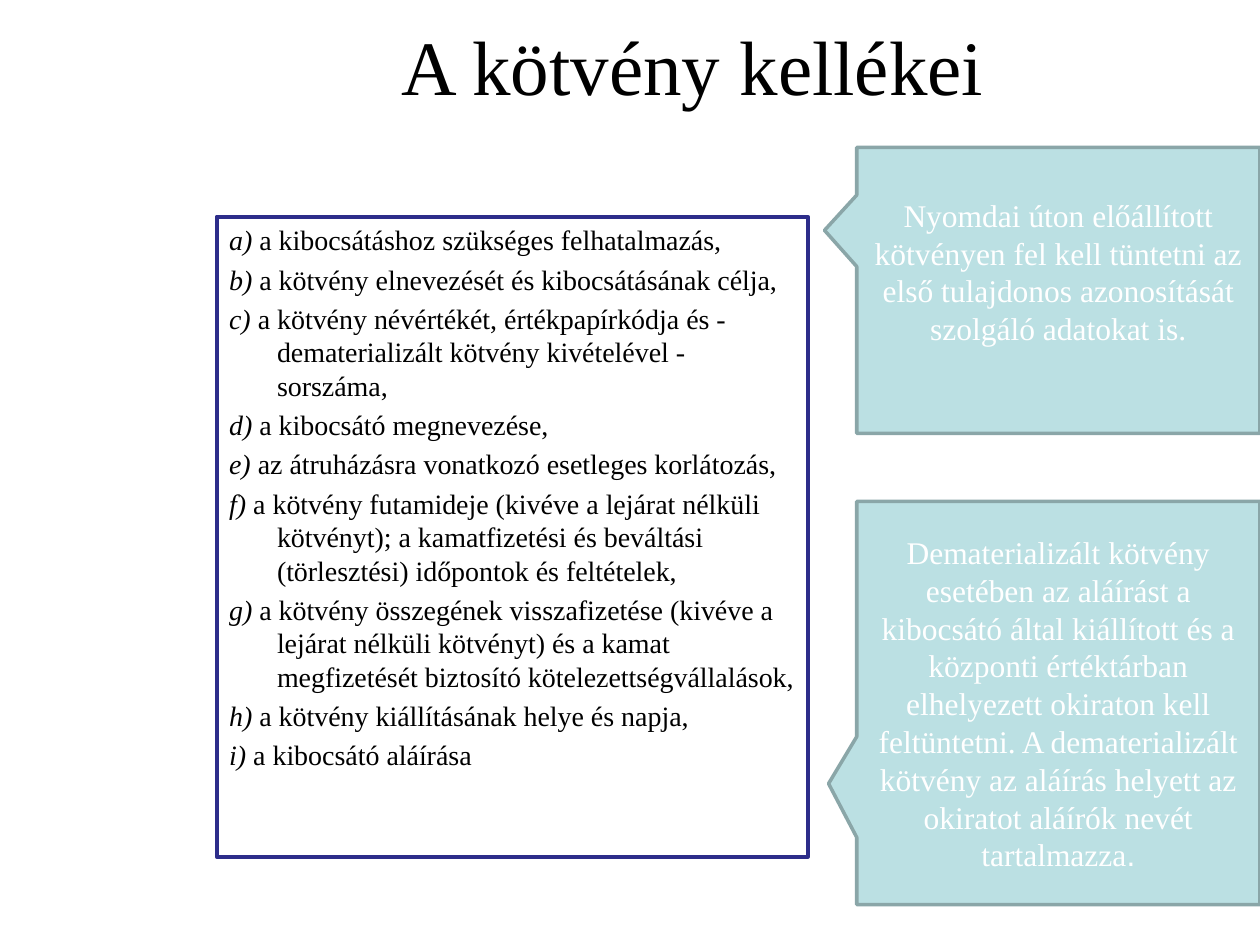
from pptx import Presentation, util as u
from pptx.dml.color import RGBColor
from pptx.enum import shapes, text
from pptx.oxml.ns import qn

COLORS = {"ink": "000000", "frame": "2D2D8A", "callout": "BBE0E3",
          "callout_line": "8AA6A8", "callout_text": "FFFFFF"}
FONT = "Times New Roman"
WIDTH, HEIGHT = 10, 7.5

TITLE = "A kötvény kellékei"
REQUISITES = [
    "a kibocsátáshoz szükséges felhatalmazás,",
    "a kötvény elnevezését és kibocsátásának célja,",
    "a kötvény névértékét, értékpapírkódja és - dematerializált kötvény "
    "kivételével - sorszáma,",
    "a kibocsátó megnevezése,",
    "az átruházásra vonatkozó esetleges korlátozás,",
    "a kötvény futamideje (kivéve a lejárat nélküli kötvényt); a kamatfizetési "
    "és beváltási (törlesztési) időpontok és feltételek,",
    "a kötvény összegének visszafizetése (kivéve a lejárat nélküli kötvényt) "
    "és a kamat megfizetését biztosító kötelezettségvállalások,",
    "a kötvény kiállításának helye és napja,",
    "a kibocsátó aláírása",
]
PRINTED = ("Nyomdai úton előállított kötvényen fel kell tüntetni az első "
           "tulajdonos azonosítását szolgáló adatokat is.")
DEMATERIALIZED = (
    "Dematerializált kötvény esetében az aláírást a kibocsátó által kiállított "
    "és a központi értéktárban elhelyezett okiraton kell feltüntetni. "
    "A dematerializált kötvény az aláírás helyett az okiratot aláírók nevét "
    "tartalmazza")


def color(name):
    return RGBColor.from_string(COLORS[name])


def inches(box):
    return [u.Inches(length) for length in box]


def set_font(paragraph, size, color_name):
    paragraph.font.name = FONT
    paragraph.font.size = u.Pt(size)
    paragraph.font.color.rgb = color(color_name)


def add_title(slide, box):
    frame = slide.shapes.add_textbox(*inches(box)).text_frame
    frame.word_wrap = True
    frame.vertical_anchor = text.MSO_ANCHOR.MIDDLE
    paragraph = frame.paragraphs[0]
    paragraph.text = TITLE
    paragraph.alignment = text.PP_ALIGN.CENTER
    set_font(paragraph, 44, "ink")


def add_requisites(slide, box):
    """Framed list with italic letters and hanging indents."""
    shape = slide.shapes.add_textbox(*inches(box))
    shape.line.color.rgb = color("frame")
    shape.line.width = u.Pt(2.25)
    frame = shape.text_frame
    frame.word_wrap = True
    for index, item in enumerate(REQUISITES):
        paragraph = frame.add_paragraph() if index else frame.paragraphs[0]
        properties = paragraph._p.get_or_add_pPr()
        properties.set("marL", str(u.Inches(0.38)))
        properties.set("indent", str(u.Inches(-0.38)))
        properties.append(properties.makeelement(qn("a:buNone"), {}))
        if index:
            paragraph.space_before = u.Pt(3.2)
        set_font(paragraph, 16, "ink")
        letter = paragraph.add_run()
        letter.text = f"{chr(ord('a') + index)}) "
        letter.font.italic = True
        paragraph.add_run().text = item


def add_callout(slide, box, pointer, wording, bottom_inset=0.05):
    """Callout whose pointer tip is a share of its size from its centre."""
    shape = slide.shapes.add_shape(
        shapes.MSO_SHAPE.RECTANGULAR_CALLOUT, *inches(box))
    shape.shadow.inherit = False
    shape.adjustments[0], shape.adjustments[1] = pointer
    shape.fill.solid()
    shape.fill.fore_color.rgb = color("callout")
    shape.line.color.rgb = color("callout_line")
    shape.line.width = u.Pt(2)
    frame = shape.text_frame
    frame.word_wrap = True
    frame.vertical_anchor = text.MSO_ANCHOR.MIDDLE
    frame.margin_bottom = u.Inches(bottom_inset)
    paragraph = frame.paragraphs[0]
    paragraph.alignment = text.PP_ALIGN.CENTER
    set_font(paragraph, 18, "callout_text")
    paragraph.add_run().text = wording
    return paragraph


def main():
    presentation = Presentation()
    presentation.slide_width = u.Inches(WIDTH)
    presentation.slide_height = u.Inches(HEIGHT)
    slide = presentation.slides.add_slide(presentation.slide_layouts[6])

    add_title(slide, (0.1 * WIDTH, 0, 0.9 * WIDTH, 1.02))
    add_requisites(slide, (1.72, 1.72, 4.69, 5.08))
    left, width = 0.68 * WIDTH, 0.32 * WIDTH
    add_callout(slide, (left, 3.98, width, 3.2), (-0.57, 0.2), DEMATERIALIZED)
    full_stop = slide.shapes[-1].text_frame.paragraphs[0].add_run()
    full_stop.text = "."
    full_stop.font.name = "Arial"
    add_callout(slide, (left, 1.17, width, 2.27), (-0.58, -0.21), PRINTED,
                bottom_inset=0.35)
    presentation.save("out.pptx")


if __name__ == "__main__":
    main()
